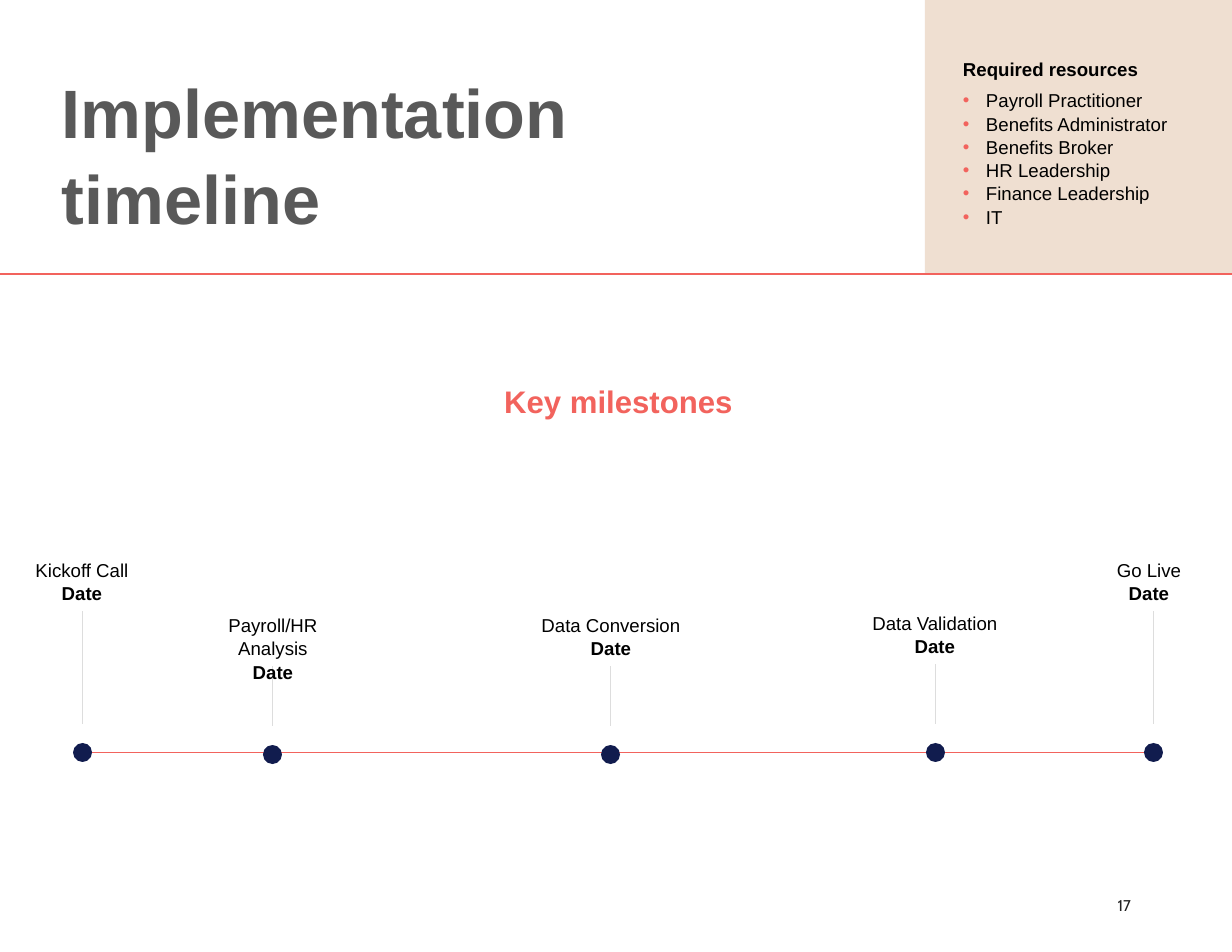
from lxml import etree
from pptx import Presentation
from pptx.dml.color import RGBColor as Rgb
from pptx.enum.shapes import MSO_CONNECTOR as Conn, MSO_SHAPE as Kind
from pptx.enum.text import MSO_ANCHOR as Anchor, PP_ALIGN as Align
from pptx.oxml.ns import qn
from pptx.util import Pt

UNIT = 914400 / 112  # EMU in one px
WIDE, HIGH = 1232, 952
HUE = {
    "coral": "F2635D", "sand": "EFDFD1", "navy": "111C4E", "grey": "595959",
    "pale": "DDDDDD", "black": "000000", "ink": "222222",
}
BODY = {"name": "Arial", "size": Pt(12), "bold": False}
LOUD = {**BODY, "bold": True}


def px(*vals):
    return [round(v * UNIT) for v in vals]


def tint(name):
    return Rgb.from_string(HUE[name])


def add_text(slide, box, rows, pad=(0, 0), wrap=True, anchor=Anchor.TOP):
    """Each row is (words, font values, colour, paragraph values, bullet)."""
    frame = slide.shapes.add_textbox(*px(*box)).text_frame
    side, top = px(*pad)
    look = {
        "margin_left": side, "margin_right": side, "margin_top": top,
        "margin_bottom": top, "word_wrap": wrap, "vertical_anchor": anchor,
    }
    for key, val in look.items():
        setattr(frame, key, val)
    for i, (words, font, hue, form, dot) in enumerate(rows):
        para = frame.add_paragraph() if i else frame.paragraphs[0]
        run = para.add_run()
        run.text = words
        if dot:
            add_dot(para)
        for key, val in form.items():
            setattr(para, key, val)
        for key, val in font.items():
            setattr(run.font, key, val)
        run.font.color.rgb = tint(hue)


def add_dot(para):
    props = para._p.get_or_add_pPr()
    dent, = px(23)
    props.set("marL", str(dent))
    props.set("indent", str(-dent))
    paint = etree.SubElement(props, qn("a:buClr"))
    etree.SubElement(paint, qn("a:srgbClr"), val=HUE["coral"])
    etree.SubElement(props, qn("a:buFont"), typeface="Arial")
    etree.SubElement(props, qn("a:buChar"), char="•")


def add_shape(slide, kind, box, hue):
    shape = slide.shapes.add_shape(kind, *px(*box))
    shape.shadow.inherit = False
    shape.fill.solid()
    shape.fill.fore_color.rgb = tint(hue)
    shape.line.fill.background()


def add_line(slide, ends, hue, weight):
    line = slide.shapes.add_connector(Conn.STRAIGHT, *px(*ends))
    line.line.color.rgb = tint(hue)
    line.line.width = Pt(weight)
    etree.SubElement(line._element.spPr, qn("a:effectLst"))


def add_head(slide, box):
    x, y, w, h = box
    # Title
    font = {**LOUD, "size": Pt(44)}
    add_text(slide, (x + 62, y + 67, 618, 166),
             [("Implementation timeline", font, "grey", {"line_spacing": 1.04}, False)])
    # Resource panel
    left = x + w - 307
    add_shape(slide, Kind.RECTANGLE, (left, y, 307, h), "sand")
    needs = ["Payroll Practitioner", "Benefits Administrator", "Benefits Broker",
             "HR Leadership", "Finance Leadership", "IT"]
    rows = [("Required resources", LOUD, "black",
             {"line_spacing": 1.04, "space_after": Pt(5.1)}, False)]
    rows += [(need, BODY, "black", {"line_spacing": 1.04}, True) for need in needs]
    add_text(slide, (left + 38, y + 57, 235, 166), rows)
    # Rule below
    add_line(slide, (x, y + h, x + w, y + h), "coral", 1.5)


def add_track(slide, box):
    x, y, w, h = box
    # Heading
    font = {**LOUD, "size": Pt(20)}
    add_text(slide, (x, y, w, 38),
             [("Key milestones", font, "coral", {"alignment": Align.CENTER}, False)],
             anchor=Anchor.MIDDLE)
    # Axis
    base = y + h
    add_line(slide, (x + 88, base, x + 1162, base), "coral", 0.5)
    # Milestones: name, centre, drop below axis, stem length, label shift
    marks = [
        ("Kickoff Call", 82, 0, 113, 0),
        ("Payroll/HR Analysis", 272, 2, 60, 1),
        ("Data Conversion", 610, 2, 60, 1),
        ("Data Validation", 935, 0, 60, 0),
        ("Go Live", 1153, 0, 113, -4),
    ]
    form = {"alignment": Align.CENTER, "line_spacing": 1.04}
    for name, mid, drop, stem, shift in marks:
        mid += x
        spot = base + drop
        foot = spot - 28
        top = foot - stem
        add_line(slide, (mid, foot, mid, top), "pale", 0.5)
        add_shape(slide, Kind.OVAL, (mid - 9, spot - 9, 19, 19), "navy")
        add_text(slide, (mid + shift - 84, top - 59, 168, 56),
                 [(name, BODY, "black", form, False),
                  ("Date", LOUD, "black", form, False)], pad=(11, 6))


def add_foot(slide, box):
    font = {"name": "Cabin", "size": Pt(10)}
    add_text(slide, box, [("17", font, "ink", {"alignment": Align.RIGHT}, False)],
             wrap=False, anchor=Anchor.MIDDLE)


def main():
    deck = Presentation()
    deck.slide_width, deck.slide_height = px(WIDE, HIGH)
    slide = deck.slides.add_slide(deck.slide_layouts[6])
    add_head(slide, (0, 0, WIDE, 274))
    add_track(slide, (0, 382, WIDE + 5, 370))
    add_foot(slide, (1113, 896, 18, 19))
    deck.save("out.pptx")


if __name__ == "__main__":
    main()
